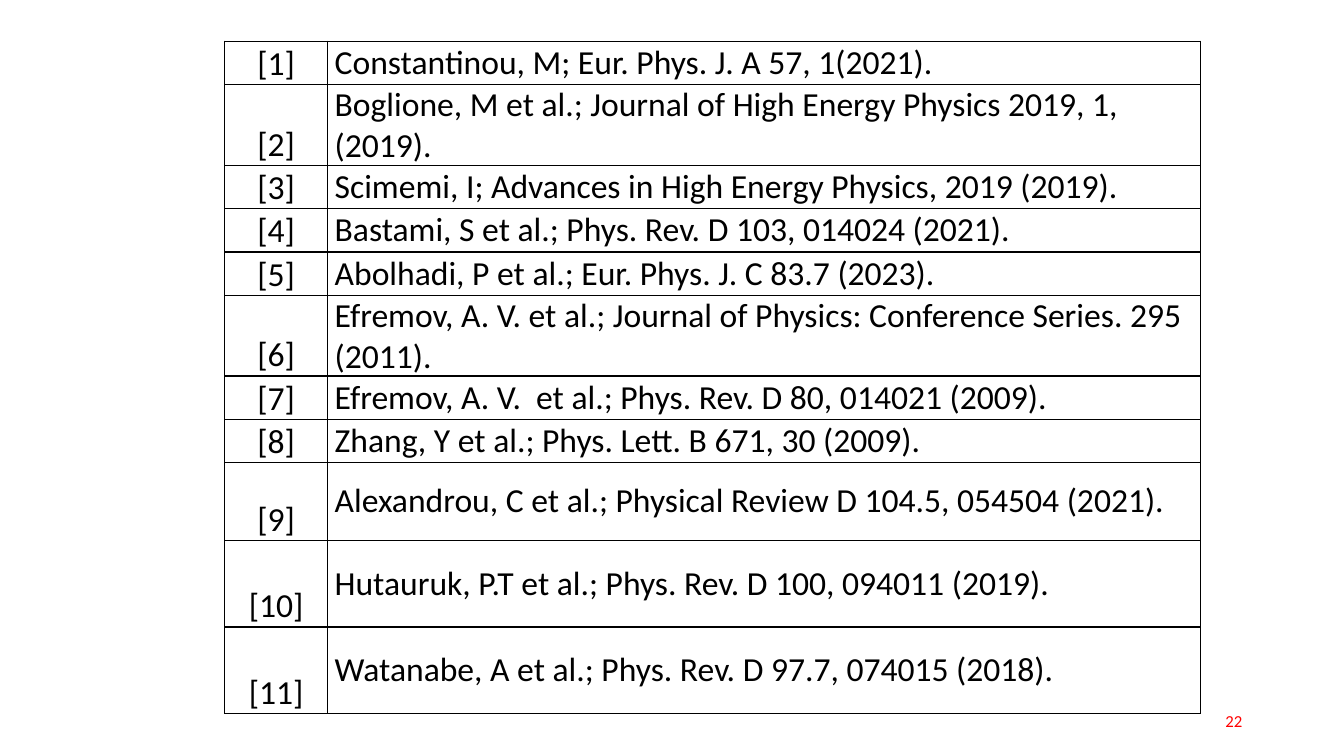
from lxml import etree
from pptx import Presentation
from pptx import util as u
from pptx.dml.color import RGBColor
from pptx.enum import text
from pptx.oxml.ns import qn

COLORS = {"ink": "000000", "paper": "FFFFFF", "number": "FF0000"}

# Each reference with the height of its row in inches
REFERENCES = [
    ("Constantinou, M; Eur. Phys. J. A 57, 1(2021).", 0.43),
    ("Boglione, M et al.; Journal of High Energy Physics 2019, 1, (2019).", 0.77),
    ("Scimemi, I; Advances in High Energy Physics, 2019 (2019).", 0.43),
    ("Bastami, S et al.; Phys. Rev. D 103, 014024 (2021).", 0.43),
    ("Abolhadi, P et al.; Eur. Phys. J. C 83.7 (2023).", 0.43),
    ("Efremov, A. V. et al.; Journal of Physics: Conference Series. 295 (2011).", 0.77),
    ("Efremov, A. V.  et al.; Phys. Rev. D 80, 014021 (2009).", 0.43),
    ("Zhang, Y et al.; Phys. Lett. B 671, 30 (2009).", 0.43),
    ("Alexandrou, C et al.; Physical Review D 104.5, 054504 (2021).", 0.77),
    ("Hutauruk, P.T et al.; Phys. Rev. D 100, 094011 (2019).", 0.86),
    ("Watanabe, A et al.; Phys. Rev. D 97.7, 074015 (2018).", 0.86),
]


class SlideBuilder:
    font = "Calibri"

    def __init__(self, prs):
        self.s = prs.slides.add_slide(prs.slide_layouts[6])

    def set_text(self, tf, words, size, color, align):
        tf.text = words
        p = tf.paragraphs[0]
        p.alignment = align
        for r in p.runs:
            r.font.name = self.font
            r.font.size = u.Pt(size)
            r.font.color.rgb = RGBColor.from_string(COLORS[color])

    def border(self, cell):
        """Draw a thin line on all four sides; must precede the cell's fill."""
        tcPr = cell._tc.get_or_add_tcPr()
        for side in ("a:lnL", "a:lnR", "a:lnT", "a:lnB"):
            ln = etree.SubElement(tcPr, qn(side), w=str(u.Pt(1)))
            fill = etree.SubElement(ln, qn("a:solidFill"))
            etree.SubElement(fill, qn("a:srgbClr"), val=COLORS["ink"])

    def cell(self, cell, words, align, anchor):
        self.border(cell)
        cell.fill.solid()
        cell.fill.fore_color.rgb = RGBColor.from_string(COLORS["paper"])
        cell.margin_left = cell.margin_right = u.Inches(0.07)
        cell.margin_top = cell.margin_bottom = 0
        cell.vertical_anchor = anchor
        self.set_text(cell.text_frame, words, 24, "ink", align)

    def reference_table(self, references, left, top, widths):
        """Add one numbered row for each (citation, height) pair."""
        height = sum(h for _, h in references)
        tbl = self.s.shapes.add_table(
            len(references), 2, u.Inches(left), u.Inches(top),
            u.Inches(sum(widths)), u.Inches(height)).table
        tbl.first_row = tbl.horz_banding = False
        for col, width in zip(tbl.columns, widths):
            col.width = u.Inches(width)
        for i, (citation, row_height) in enumerate(references):
            tbl.rows[i].height = u.Inches(row_height)
            self.cell(tbl.cell(i, 0), f"[{i + 1}]",
                      text.PP_ALIGN.CENTER, text.MSO_ANCHOR.BOTTOM)
            self.cell(tbl.cell(i, 1), citation,
                      text.PP_ALIGN.LEFT, text.MSO_ANCHOR.MIDDLE)

    def page_number(self, number, left, top, width, height):
        sp = self.s.shapes.add_textbox(*map(u.Inches, (left, top, width, height)))
        tf = sp.text_frame
        tf.word_wrap = True
        tf.vertical_anchor = text.MSO_ANCHOR.MIDDLE
        self.set_text(tf, number, 12, "number", text.PP_ALIGN.RIGHT)


def main():
    prs = Presentation()
    prs.slide_width, prs.slide_height = u.Inches(13.33), u.Inches(7.5)
    slide = SlideBuilder(prs)
    slide.page_number("22", 9.42, 6.95, 3, 0.4)
    slide.reference_table(REFERENCES, 2.23, 0.41, (1.02, 8.66))
    prs.save("out.pptx")


if __name__ == "__main__":
    main()
